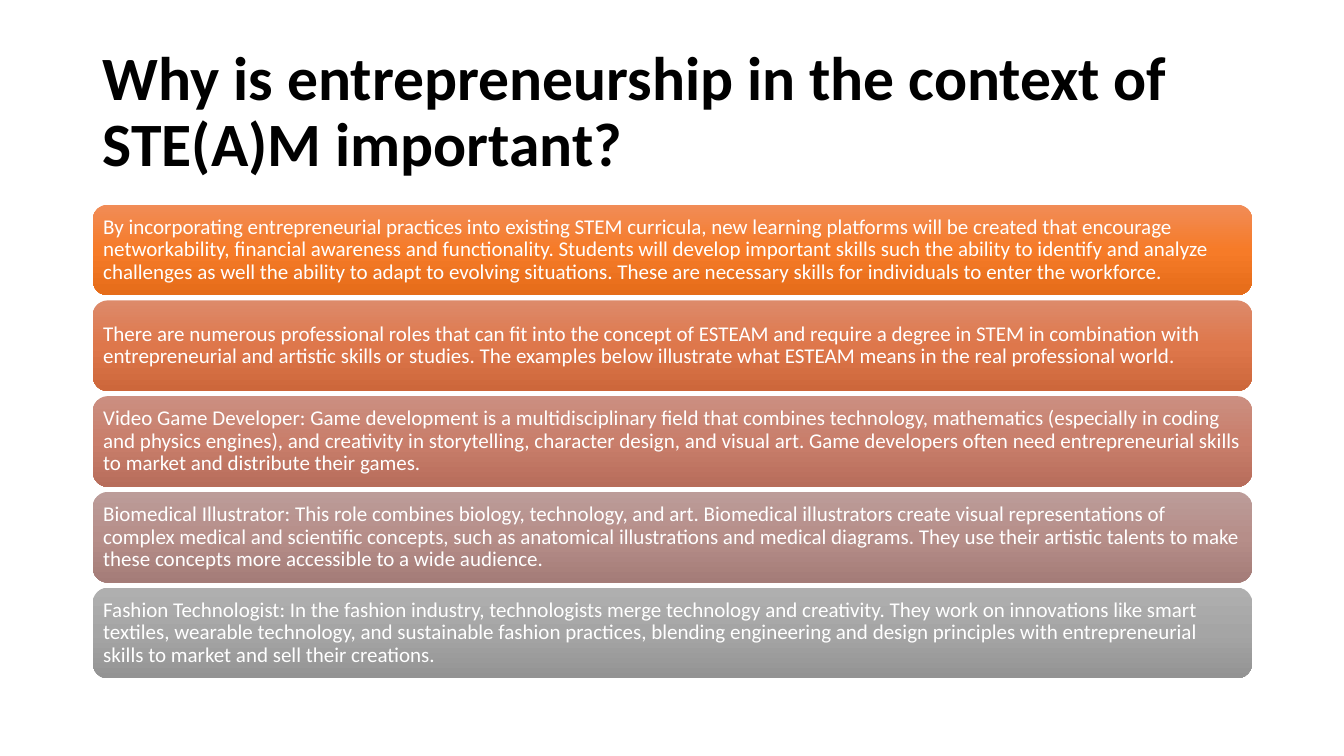
from copy import deepcopy
from dataclasses import dataclass

from pptx import Presentation
from pptx.dml.color import RGBColor
from pptx.enum.shapes import MSO_SHAPE
from pptx.enum.text import MSO_ANCHOR, MSO_AUTO_SIZE, PP_ALIGN
from pptx.oxml.ns import qn
from pptx.slide import Slide
from pptx.text.text import TextFrame
from pptx.util import Inches, Pt

# Grid: one wide column, cards stacked at an equal pitch
SLIDE_WIDTH, SLIDE_HEIGHT = 13.33, 7.5
COLUMN_LEFT, COLUMN_WIDTH = 0.92, 11.5
TITLE_TOP, TITLE_HEIGHT = 0.4, 1.45
FIRST_ROW, ROW_HEIGHT, ROW_GAP = 2.03, 0.9, 0.05
CARD_INSET = 0.06
FONT = "Calibri"


@dataclass(frozen=True)
class Card:
    text: str
    shades: tuple[str, str, str]  # top, middle, bottom


CARDS = [
    Card("By incorporating entrepreneurial practices into existing STEM curricula, new learning "
         "platforms will be created that encourage networkability, financial awareness and "
         "functionality. Students will develop important skills such the ability to identify and "
         "analyze challenges as well the ability to adapt to evolving situations. These are "
         "necessary skills for individuals to enter the workforce.",
         ("F18C57", "F67B28", "E56C19")),
    Card("There are numerous professional roles that can fit into the concept of ESTEAM and "
         "require a degree in STEM in combination with entrepreneurial and artistic skills or "
         "studies. The examples below illustrate what ESTEAM means in the real professional world.",
         ("DD8A6A", "DE774B", "CD673B")),
    Card("Video Game Developer: Game development is a multidisciplinary field that combines "
         "technology, mathematics (especially in coding and physics engines), and creativity in "
         "storytelling, character design, and visual art. Game developers often need "
         "entrepreneurial skills to market and distribute their games.",
         ("CB8F81", "C97E6B", "B76D5B")),
    Card("Biomedical Illustrator: This role combines biology, technology, and art. Biomedical "
         "illustrators create visual representations of complex medical and scientific concepts, "
         "such as anatomical illustrations and medical diagrams. They use their artistic talents "
         "to make these concepts more accessible to a wide audience.",
         ("BC9C99", "B68E89", "A47C78")),
    Card("Fashion Technologist: In the fashion industry, technologists merge technology and "
         "creativity. They work on innovations like smart textiles, wearable technology, and "
         "sustainable fashion practices, blending engineering and design principles with "
         "entrepreneurial skills to market and sell their creations.",
         ("AFAFAF", "A5A5A5", "939393")),
]


def color(value: str) -> RGBColor:
    return RGBColor.from_string(value)


def write(frame: TextFrame, text: str, size: float, ink: str, bold: bool = False) -> None:
    frame.text = text
    frame.word_wrap = True
    frame.auto_size = MSO_AUTO_SIZE.NONE
    frame.vertical_anchor = MSO_ANCHOR.MIDDLE
    paragraph = frame.paragraphs[0]
    paragraph.alignment = PP_ALIGN.LEFT
    paragraph.line_spacing = 0.9
    paragraph.font.name = FONT
    paragraph.font.size = Pt(size)
    paragraph.font.bold = bold
    paragraph.font.color.rgb = color(ink)


def add_title(slide: Slide, text: str) -> None:
    title = slide.shapes.title
    title.left, title.top = Inches(COLUMN_LEFT), Inches(TITLE_TOP)
    title.width, title.height = Inches(COLUMN_WIDTH), Inches(TITLE_HEIGHT)
    write(title.text_frame, text, 44, "000000", bold=True)


def add_card(slide: Slide, row: int, card: Card) -> None:
    top = FIRST_ROW + row * (ROW_HEIGHT + ROW_GAP)
    panel = slide.shapes.add_shape(
        MSO_SHAPE.ROUNDED_RECTANGLE, Inches(COLUMN_LEFT), Inches(top),
        Inches(COLUMN_WIDTH), Inches(ROW_HEIGHT))
    panel.shadow.inherit = False
    panel.line.fill.background()

    # Three-stop gradient running downwards
    panel.fill.gradient()
    panel.fill.gradient_angle = 270
    stops = panel._element.spPr.find(qn("a:gradFill")).find(qn("a:gsLst"))
    stops.append(deepcopy(stops[0]))
    for stop, shade, position in zip(panel.fill.gradient_stops, card.shades, (0, 0.5, 1)):
        stop.color.rgb = color(shade)
        stop.position = position

    frame = panel.text_frame
    frame.margin_left = frame.margin_right = Inches(CARD_INSET)
    frame.margin_top = frame.margin_bottom = Inches(CARD_INSET)
    write(frame, card.text, 15, "FFFFFF")


def main() -> None:
    deck = Presentation()
    deck.slide_width, deck.slide_height = Inches(SLIDE_WIDTH), Inches(SLIDE_HEIGHT)
    slide = deck.slides.add_slide(deck.slide_layouts.get_by_name("Title Only"))
    add_title(slide, "Why is entrepreneurship in the context of STE(A)M important?")
    for row, card in enumerate(CARDS):
        add_card(slide, row, card)
    deck.save("out.pptx")


if __name__ == "__main__":
    main()
